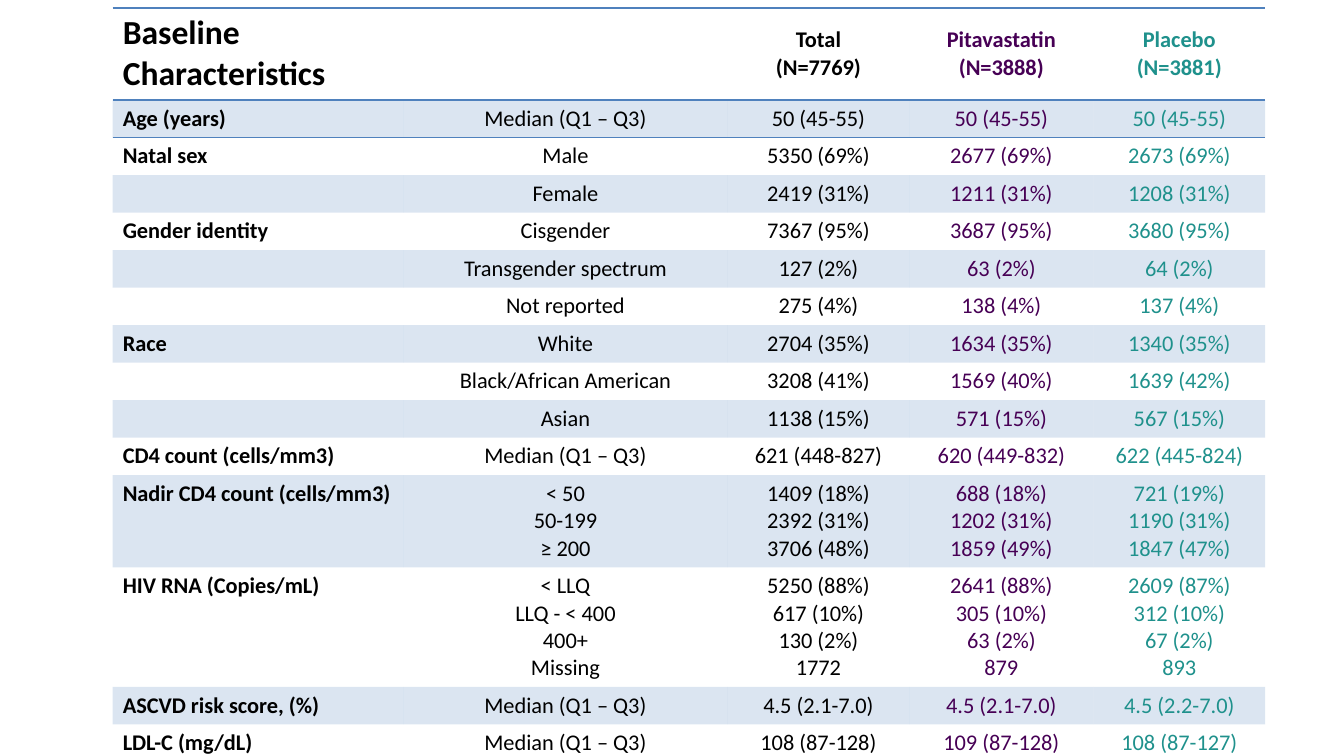
import pptx
import pptx.dml.color
import pptx.enum.text
import pptx.oxml.ns
import pptx.util
from lxml import etree

Cm, Pt = pptx.util.Cm, pptx.util.Pt
qn = pptx.oxml.ns.qn
PP_ALIGN = pptx.enum.text.PP_ALIGN
ANCHOR = pptx.enum.text.MSO_ANCHOR

BLACK, PURPLE, TEAL, BLUE = "000000", "470055", "1F918C", "4F81BD"
COLUMN_COLOURS = [BLACK, BLACK, BLACK, PURPLE, TEAL]
COLUMN_WIDTHS = [7.32, 8.18, 4.57, 4.65, 4.32]
PLAIN_TABLE_STYLE = "{2D5ABB26-0587-4C30-8999-92F81FD0307C}"

HEADER = ["Baseline Characteristics", "", "Total\n(N=7769)",
          "Pitavastatin (N=3888)", "Placebo\n(N=3881)"]
MEDIAN = "Median (Q1 – Q3)"
ROWS = [
    ["Age (years)", MEDIAN, "50 (45-55)", "50 (45-55)", "50 (45-55)"],
    ["Natal sex", "Male", "5350 (69%)", "2677 (69%)", "2673 (69%)"],
    ["", "Female", "2419 (31%)", "1211 (31%)", "1208 (31%)"],
    ["Gender identity", "Cisgender", "7367 (95%)", "3687 (95%)", "3680 (95%)"],
    ["", "Transgender spectrum", "127 (2%)", "63 (2%)", "64 (2%)"],
    ["", "Not reported", "275 (4%)", "138 (4%)", "137 (4%)"],
    ["Race", "White", "2704 (35%)", "1634 (35%)", "1340 (35%)"],
    ["", "Black/African American", "3208 (41%)", "1569 (40%)", "1639 (42%)"],
    ["", "Asian", "1138 (15%)", "571 (15%)", "567 (15%)"],
    ["CD4 count (cells/mm3)", MEDIAN, "621 (448-827)", "620 (449-832)", "622 (445-824)"],
    ["Nadir CD4 count (cells/mm3)", "< 50\n50-199\n≥ 200",
     "1409 (18%)\n2392 (31%)\n3706 (48%)",
     "688 (18%)\n1202 (31%)\n1859 (49%)",
     "721 (19%)\n1190 (31%)\n1847 (47%)"],
    ["HIV RNA (Copies/mL)", "< LLQ\nLLQ - < 400\n400+\nMissing",
     "5250 (88%)\n617 (10%)\n130 (2%)\n1772",
     "2641 (88%)\n305 (10%)\n63 (2%)\n879",
     "2609 (87%)\n312 (10%)\n67 (2%)\n893"],
    ["ASCVD risk score, (%)", MEDIAN, "4.5 (2.1-7.0)", "4.5 (2.1-7.0)", "4.5 (2.2-7.0)"],
    ["LDL-C (mg/dL)", MEDIAN, "108 (87-128)", "109 (87-128)", "108 (87-127)"],
]


def rgb(colour):
    return pptx.dml.color.RGBColor.from_string(colour)


def write(tf, text, size=16, colour=BLACK, bold=False, align=PP_ALIGN.LEFT, font="Calibri"):
    """Write one paragraph per line of text."""
    for i, line in enumerate(text.split("\n")):
        p = tf.add_paragraph() if i else tf.paragraphs[0]
        p.alignment = align
        if not line:
            # An empty cell keeps the line height of its row
            etree.SubElement(p._p, qn("a:endParaRPr"), sz=str(size * 100))
            continue
        r = p.add_run()
        r.text = line
        r.font.name, r.font.size, r.font.bold = font, Pt(size), bold
        r.font.color.rgb = rgb(colour)


class SlideBuilder:
    def __init__(self, prs):
        self.s = prs.slides.add_slide(prs.slide_layouts[6])
        self.rule_colour = self.band_colour = BLUE
        self.band_opacity = 20

    def rule(self, cell, side):
        """Draw a thin border on side 'T' or 'B' of a cell."""
        ln = etree.SubElement(cell._tc.get_or_add_tcPr(), qn("a:ln" + side), w=str(Pt(1)))
        fill = etree.SubElement(ln, qn("a:solidFill"))
        etree.SubElement(fill, qn("a:srgbClr"), val=self.rule_colour)

    def band(self, cell):
        """Tint a cell with the transparent band colour."""
        cell.fill.solid()
        cell.fill.fore_color.rgb = rgb(self.band_colour)
        clr = cell._tc.tcPr.find(qn("a:solidFill")).find(qn("a:srgbClr"))
        etree.SubElement(clr, qn("a:alpha"), val=str(self.band_opacity * 1000))

    def table(self, rows, left, top, widths, heights):
        frame = self.s.shapes.add_table(len(rows), len(widths), Cm(left), Cm(top),
                                        Cm(sum(widths)), Cm(sum(heights)))
        table = frame.table
        table._tbl.tblPr.find(qn("a:tableStyleId")).text = PLAIN_TABLE_STYLE
        for column, width in zip(table.columns, widths):
            column.width = Cm(width)
        for i, values in enumerate(rows):
            table.rows[i].height = Cm(heights[i])
            for j, text in enumerate(values):
                self.cell(table.cell(i, j), text, i, j, i == len(rows) - 1)

    def cell(self, cell, text, i, j, last):
        # Rules around the header and below the last row
        if i <= 1:
            self.rule(cell, "T")
        if i == 0 or last:
            self.rule(cell, "B")
        # Every second row is tinted
        if i % 2:
            self.band(cell)
        else:
            cell.fill.background()
        cell.vertical_anchor = ANCHOR.MIDDLE if j else ANCHOR.TOP
        write(cell.text_frame, text, size=24 if i == j == 0 else 16,
              colour=COLUMN_COLOURS[j], bold=i == 0 or j == 0,
              align=PP_ALIGN.CENTER if j else PP_ALIGN.LEFT)


def main():
    prs = pptx.Presentation()
    prs.slide_width, prs.slide_height = Cm(33.87), Cm(19.05)

    # Baseline table: row height follows the number of lines
    line_heights = {1: 0.91, 3: 2.24, 4: 2.92}
    heights = [1.75] + [line_heights[row[1].count("\n") + 1] for row in ROWS]
    SlideBuilder(prs).table([HEADER] + ROWS, 2.84, 0.2, COLUMN_WIDTHS, heights)

    prs.save("out.pptx")


if __name__ == "__main__":
    main()
